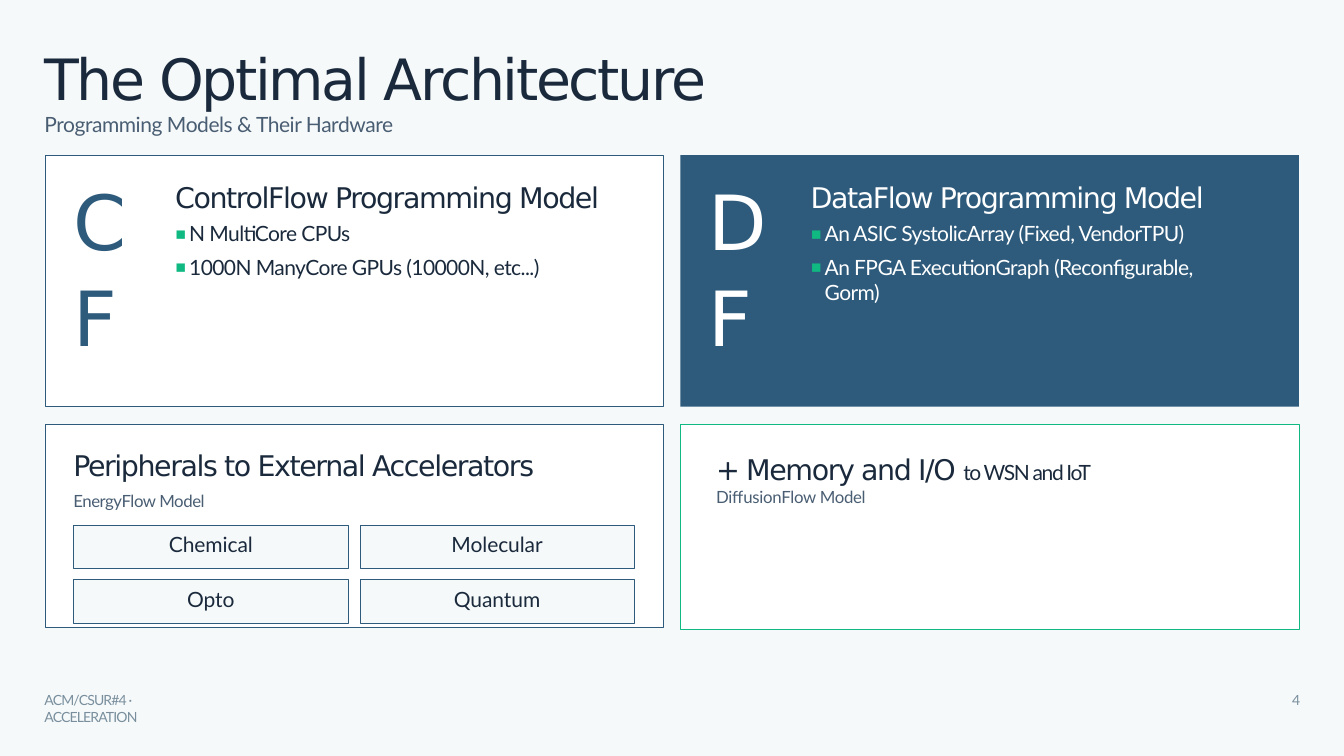
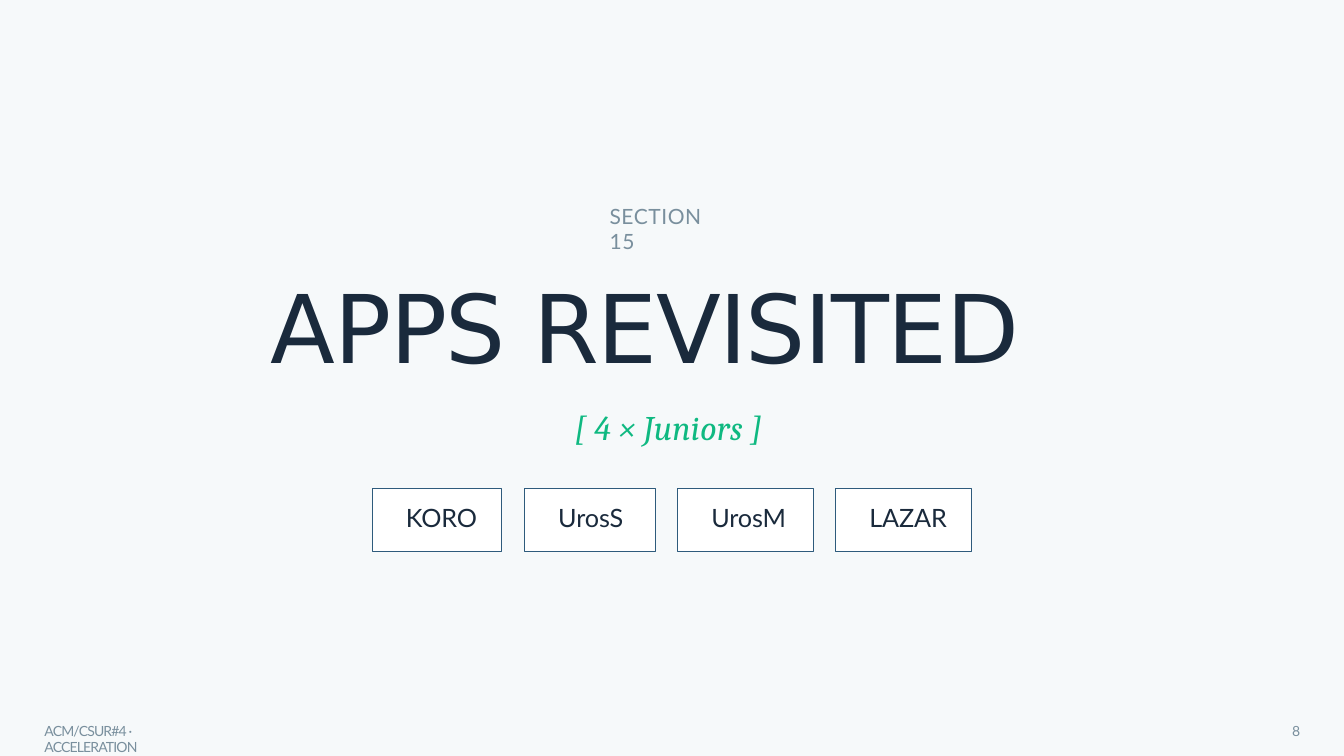
import pptx
import pptx.util
import pptx.dml.color
import pptx.enum.shapes
import pptx.enum.text
import pptx.oxml.ns
import lxml.etree

Cm = pptx.util.Cm
Pt = pptx.util.Pt

INK = "1A2A3C"
SLATE = "4A5E73"
GREY = "798F9D"
BLUE = "2E5B7C"
GREEN = "0FB981"
PAPER = "F6F9FA"
WHITE = "FFFFFF"
HEADING_FONT = "DejaVu Sans"
BODY_FONT = "Lato"
QUOTE_FONT = "Cambria"

MARGIN = 1.7
PANEL_WIDTH = 23.38
RIGHT_PANEL = 25.72
TITLE_LEFT = 1.65


def color(value):
    return pptx.dml.color.RGBColor.from_string(value)


def set_frame(shape, inset_left=0, inset_top=0, inset_right=0):
    frame = shape.text_frame
    frame.word_wrap = True
    frame.auto_size = pptx.enum.text.MSO_AUTO_SIZE.NONE
    frame.vertical_anchor = pptx.enum.text.MSO_ANCHOR.TOP
    frame.margin_left, frame.margin_top = Cm(inset_left), Cm(inset_top)
    frame.margin_right, frame.margin_bottom = Cm(inset_right), 0
    return frame


def set_bullet(paragraph, bullet, indent):
    properties = paragraph._p.get_or_add_pPr()
    properties.set("marL", str(Cm(indent)))
    properties.set("indent", str(-Cm(indent) if bullet else 0))

    def add(parent, tag, **attributes):
        return lxml.etree.SubElement(parent, pptx.oxml.ns.qn("a:" + tag), attributes)

    if bullet:
        add(add(properties, "buClr"), "srgbClr", val=GREEN)
        add(properties, "buSzPct", val="80000")
        add(properties, "buFont", typeface=HEADING_FONT)
        add(properties, "buChar", char=bullet)
    else:
        add(properties, "buNone")


def write(frame, text, size, fill=INK, font=BODY_FONT, spacing=0, before=0, indent=0,
          align="LEFT", italic=False, bullet=None, line_spacing=None, same_line=False):
    paragraph = frame.paragraphs[-1]
    if not same_line:
        if paragraph.runs:
            paragraph = frame.add_paragraph()
        set_bullet(paragraph, bullet, indent)
        paragraph.alignment = getattr(pptx.enum.text.PP_ALIGN, align)
        paragraph.space_before = Pt(before)
        paragraph.line_spacing = line_spacing
    run = paragraph.add_run()
    run.text = text
    run.font.name = font
    run.font.size = Pt(size)
    run.font.italic = italic
    run.font.color.rgb = color(fill)
    run._r.get_or_add_rPr().set("spc", str(round(spacing * 100)))


def place(shape, left, top, width, height):
    shape.left, shape.top = Cm(left), Cm(top)
    shape.width, shape.height = Cm(width), Cm(height)


def add_text_box(slide, left, top, width, height, **insets):
    box = slide.shapes.add_textbox(Cm(left), Cm(top), Cm(width), Cm(height))
    return set_frame(box, **insets)


def add_box(slide, left, top, width, height, fill=WHITE, line=BLUE, inset_top=0):
    box = slide.shapes.add_shape(pptx.enum.shapes.MSO_SHAPE.RECTANGLE,
                                 Cm(left), Cm(top), Cm(width), Cm(height))
    box.shadow.inherit = False
    box.fill.solid()
    box.fill.fore_color.rgb = color(fill)
    if line:
        box.line.color.rgb = color(line)
        box.line.width = Pt(0.75)
    else:
        box.line.fill.background()
    return set_frame(box, inset_top=inset_top)


def add_title(slide, text, size, spacing, left, top, width, height, inset_top):
    title = slide.shapes.title
    place(title, left, top, width, height)
    frame = set_frame(title, inset_top=inset_top)
    write(frame, text, size, font=HEADING_FONT, spacing=spacing, indent=0.03)
    return frame


def add_footer(slide, top, number):
    footer = add_text_box(slide, TITLE_LEFT, top, 6.68, 0.81, inset_top=0.05, inset_right=2.8)
    write(footer, "ACM/CSUR#4 · ACCELERATION", 15, GREY, spacing=-0.9, indent=0.03)
    page = add_text_box(slide, 48.74, top, 0.51, 0.81, inset_top=0.05)
    write(page, number, 15, GREY, spacing=-0.5, indent=0.1)


def add_model(slide, body, left, initials, heading, points, panel_fill, panel_line,
              initials_fill, text_fill, initials_spacing, body_width):
    add_box(slide, left, 5.87, PANEL_WIDTH, 9.5, panel_fill, panel_line)
    letters = add_text_box(slide, left + 1.07, 6.37, 3.35, 3.53, inset_top=0.05, inset_right=0.5)
    write(letters, initials, 81.5, initials_fill, HEADING_FONT, initials_spacing,
          line_spacing=1.05)
    place(body, left + 4.92, 6.39, body_width, 4.2)
    slide.shapes._spTree.append(body._element)
    frame = set_frame(body, inset_top=0.41)
    write(frame, heading, 30.5, text_fill, HEADING_FONT, -1.5)
    for point, before in zip(points, (7.4, 9)):
        write(frame, point, 22.5, text_fill, spacing=-0.65, before=before,
              indent=0.53, bullet="▪")


def add_accelerators(slide):
    panel = add_box(slide, MARGIN, 16.03, PANEL_WIDTH, 7.7, inset_top=0.92)
    write(panel, "Peripherals to External Accelerators", 30.5, font=HEADING_FONT,
          spacing=-1.5, indent=1.07)
    write(panel, "EnergyFlow Model", 18, SLATE, spacing=-0.45, before=8.9, indent=1.07)
    for index, name in enumerate(("Chemical", "Molecular", "Opto", "Quantum")):
        row, column = divmod(index, 2)
        chip = add_box(slide, 2.79 + column * 10.82, 19.86 + row * 2.06, 10.36, 1.63,
                       PAPER, inset_top=0.25)
        write(chip, name, 22.5, spacing=-0.1, align="CENTER")


def add_memory(slide):
    add_box(slide, RIGHT_PANEL, 16.03, PANEL_WIDTH, 7.77, line=GREEN)
    memory = add_text_box(slide, 26.82, 16.97, 16.15, 3.1,
                          inset_left=0.25, inset_top=0.13, inset_right=0.25)
    write(memory, "+ Memory and I/O ", 30.5, font=HEADING_FONT, spacing=-1.5)
    write(memory, "to WSN and IoT", 22.5, spacing=-1.5, same_line=True)
    write(memory, "DiffusionFlow Model", 18, SLATE, spacing=-0.3)


def build_architecture(presentation):
    slide = presentation.slides.add_slide(presentation.slide_layouts[3])
    title = add_title(slide, "The Optimal Architecture", 61, -2.5,
                      TITLE_LEFT, 1.14, 47.47, 4.06, 0.49)
    write(title, "Programming Models & Their Hardware", 22.5, SLATE, spacing=-0.5, indent=0.03)
    add_model(slide, slide.placeholders[1], MARGIN, "CF", "ControlFlow Programming Model",
              ("N MultiCore CPUs", "1000N ManyCore GPUs (10000N, etc...)"),
              WHITE, BLUE, BLUE, INK, -5.5, 16.97)
    add_model(slide, slide.placeholders[2], RIGHT_PANEL, "DF", "DataFlow Programming Model",
              ("An ASIC SystolicArray (Fixed, VendorTPU)",
               "An FPGA ExecutionGraph (Reconfigurable, Gorm)"),
              BLUE, None, WHITE, WHITE, -7.9, 16.31)
    add_accelerators(slide)
    add_memory(slide)
    add_footer(slide, 26.09, "4")


def build_section(presentation):
    slide = presentation.slides.add_slide(presentation.slide_layouts[5])
    section = add_text_box(slide, 23.01, 7.65, 4.67, 1.02, inset_top=0.03, inset_right=0.5)
    write(section, "SECTION 15", 22.5, GREY, spacing=0.6, indent=0.03)
    add_title(slide, "APPS REVISITED", 101.5, -1.5, 10.21, 9.88, 30.3, 4.37, 0.28)
    juniors = add_text_box(slide, 21.69, 15.29, 7.42, 1.65, inset_top=0.05)
    write(juniors, "[ 4 × Juniors ]", 37, GREEN, QUOTE_FONT, 0.2, indent=0.03, italic=True)
    left = 14.07
    for name, width in (("KORO", 4.9), ("UrosS", 4.93), ("UrosM", 5.11), ("LAZAR", 5.13)):
        chip = add_box(slide, left, 18.47, width, 2.36, inset_top=0.51)
        write(chip, name, 27, spacing=-0.1, indent=1.27)
        left += width + 0.86
    add_footer(slide, 27.25, "8")


def main():
    presentation = pptx.Presentation()
    presentation.slide_width, presentation.slide_height = Cm(50.8), Cm(28.58)
    background = presentation.slide_master.background.fill
    background.solid()
    background.fore_color.rgb = color(PAPER)
    build_architecture(presentation)
    build_section(presentation)
    presentation.save("out.pptx")


if __name__ == "__main__":
    main()
